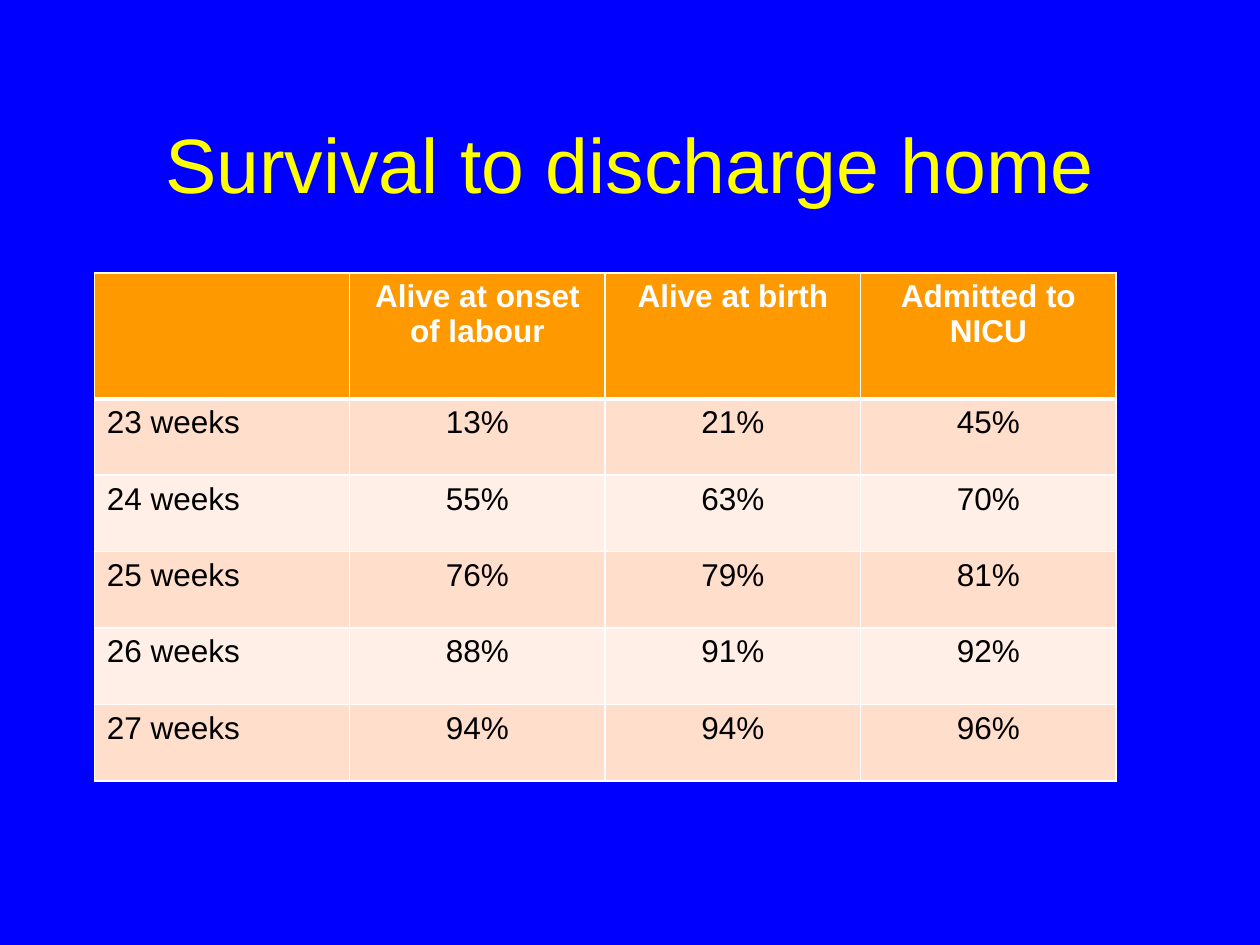
from lxml import etree
from pptx import Presentation
from pptx.dml.color import RGBColor
from pptx.enum.text import MSO_ANCHOR, PP_ALIGN
from pptx.oxml.ns import qn
from pptx.util import Cm, Pt

LEFT, CENTER = PP_ALIGN.LEFT, PP_ALIGN.CENTER
MIDDLE = MSO_ANCHOR.MIDDLE

COLORS = {
    "background": "0000FF",
    "title": "FFFF00",
    "header": "FF9900",
    "header_text": "FFFFFF",
    "odd_row": "FFDECC",
    "even_row": "FFEFE7",
    "body_text": "000000",
    "border": "FFFFFF",
}

SURVIVAL = [
    ["", "Alive at onset of labour", "Alive at birth", "Admitted to NICU"],
    ["23 weeks", "13%", "21%", "45%"],
    ["24 weeks", "55%", "63%", "70%"],
    ["25 weeks", "76%", "79%", "81%"],
    ["26 weeks", "88%", "91%", "92%"],
    ["27 weeks", "94%", "94%", "96%"],
]


class SlideBuilder:
    """Holds the style and the current slide."""

    font = "Arial"
    title_size = 44
    table_size = 18

    def __init__(self, prs):
        self.s = prs.slides.add_slide(prs.slide_layouts[6])
        self.fill(self.s.background.fill, "background")

    def fill(self, fill, color):
        fill.solid()
        fill.fore_color.rgb = RGBColor.from_string(COLORS[color])

    def text(self, tf, text, size, color, align, bold=False):
        p = tf.paragraphs[0]
        p.alignment = align
        if text:
            r = p.add_run()
            r.text = text
            r.font.name = self.font
            r.font.size = Pt(size)
            r.font.bold = bold
            r.font.color.rgb = RGBColor.from_string(COLORS[color])

    def title(self, text, left, top, width, height):
        sp = self.s.shapes.add_textbox(Cm(left), Cm(top), Cm(width), Cm(height))
        tf = sp.text_frame
        tf.word_wrap = True
        tf.vertical_anchor = MIDDLE
        self.text(tf, text, self.title_size, "title", CENTER)

    def borders(self, cell, **widths):
        tc_pr = cell._tc.get_or_add_tcPr()
        for side in "LRTB":
            width = Pt(widths.get(side, 1))
            ln = etree.SubElement(tc_pr, qn(f"a:ln{side}"), w=str(width))
            solid = etree.SubElement(ln, qn("a:solidFill"))
            etree.SubElement(solid, qn("a:srgbClr"), val=COLORS["border"])

    def table(self, rows, left, top, col_width, header_height, row_height):
        n_rows, n_cols = len(rows), len(rows[0])
        width = col_width * n_cols
        height = header_height + row_height * (n_rows - 1)
        table = self.s.shapes.add_table(
            n_rows, n_cols, Cm(left), Cm(top), Cm(width), Cm(height)
        ).table
        for col in table.columns:
            col.width = Cm(col_width)
        for i, values in enumerate(rows):
            header = i == 0
            table.rows[i].height = Cm(header_height if header else row_height)
            band = "header" if header else "odd_row" if i % 2 else "even_row"
            color = "header_text" if header else "body_text"
            for j, value in enumerate(values):
                cell = table.cell(i, j)
                self.borders(cell, T=3 if i == 1 else 1, B=3 if header else 1)
                self.fill(cell.fill, band)
                align = CENTER if j else LEFT
                self.text(cell.text_frame, value, self.table_size, color, align, header)


def main():
    prs = Presentation()
    prs.slide_width, prs.slide_height = Cm(25.4), Cm(19.05)
    slide = SlideBuilder(prs)
    slide.title("Survival to discharge home", 1.9, 1.7, 21.6, 3.18)
    slide.table(SURVIVAL, 1.9, 5.5, 5.15, 2.54, 1.54)
    prs.save("out.pptx")


if __name__ == "__main__":
    main()
